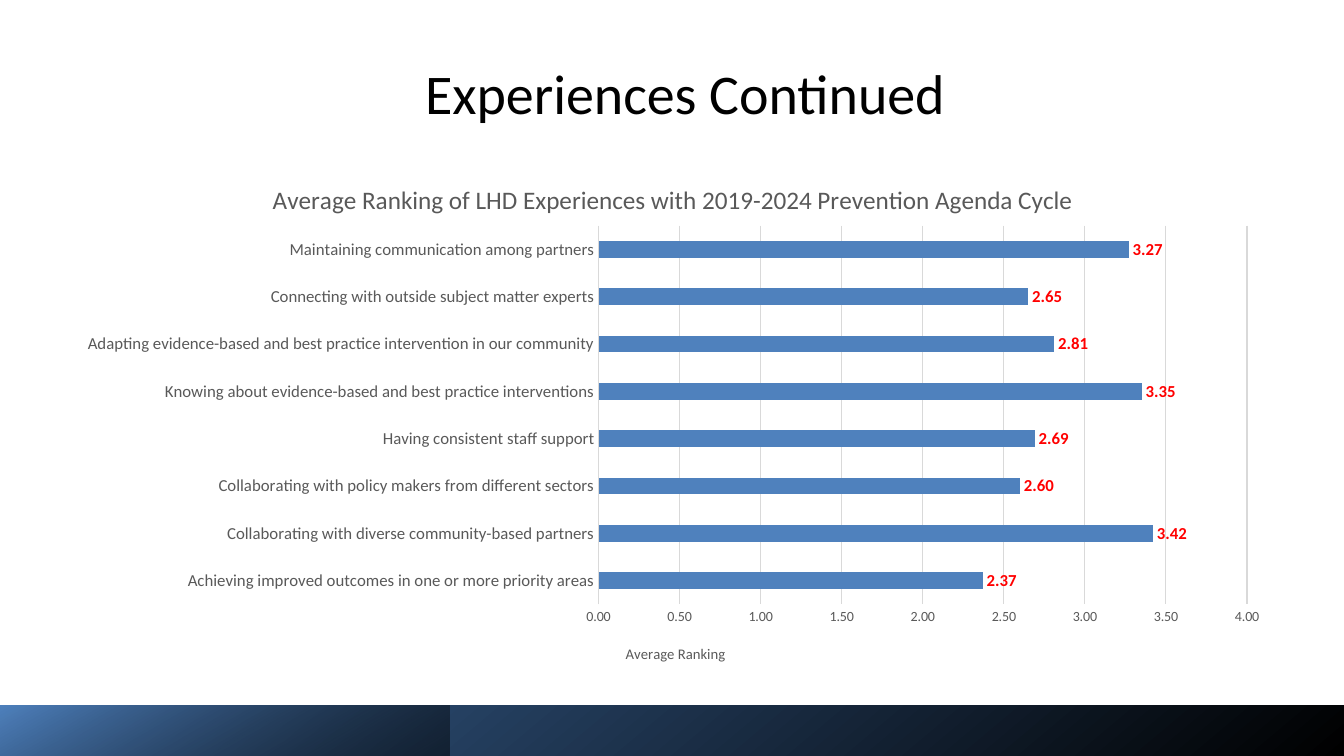
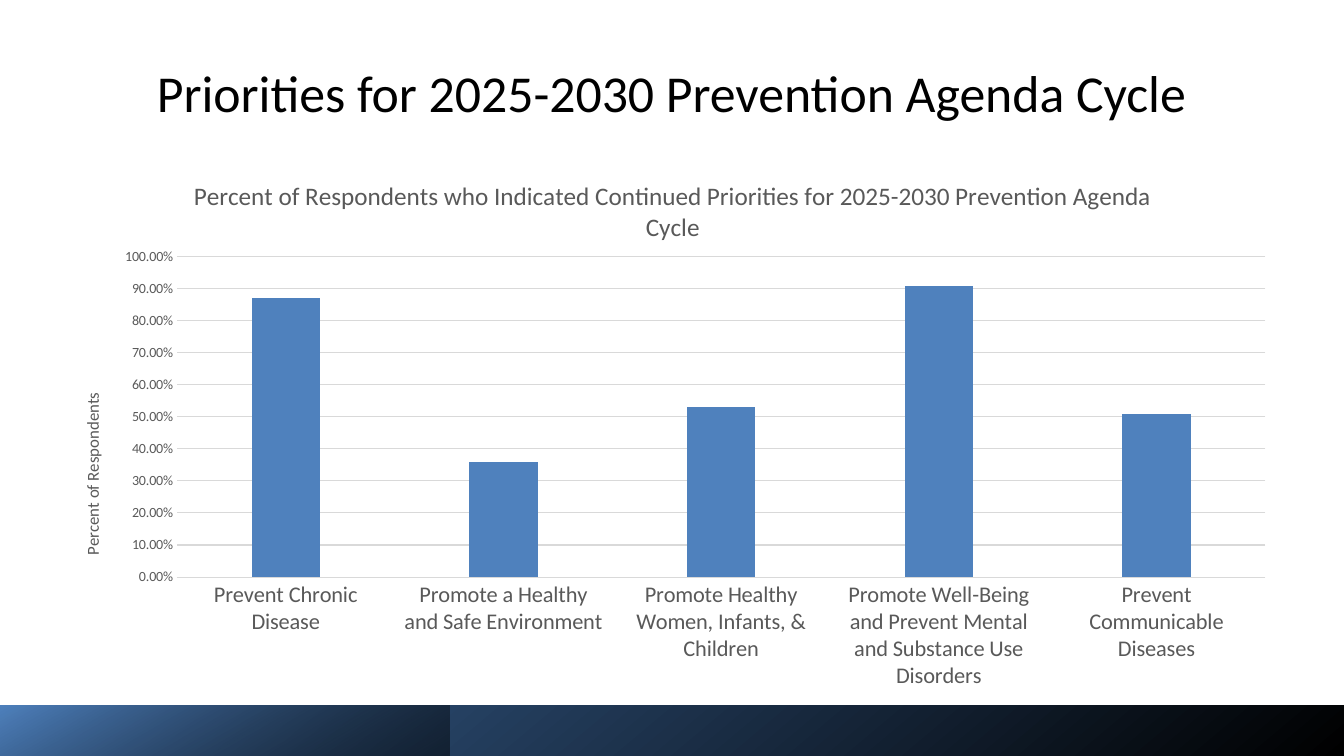
from lxml import etree
from pptx import Presentation
from pptx.chart.data import CategoryChartData
from pptx.dml.color import RGBColor
from pptx.enum import chart as charts, shapes, text
from pptx.oxml import ns
from pptx.util import Pt

FONT = "Calibri"
BLACK, GRAY, GRID, BLUE, NAVY, RED = (
    "000000", "595959", "D9D9D9", "4F81BD", "376092", "FF0000")

# width, gradient angle, start opacity in percent, end colour
BANDS = [(960, 130, 100, NAVY), (321, 120, 46, BLUE)]

SLIDES = [
    dict(
        title="Experiences Continued", title_size=40, title_left=88.5,
        kind=charts.XL_CHART_TYPE.BAR_CLUSTERED,
        box=(43, 108.5, 874, 376),
        heading="Average Ranking of LHD Experiences with 2019-2024 Prevention Agenda Cycle",
        heading_at=(0.17, 0.05),
        axis_title="Average Ranking", axis_title_size=10.5,
        axis_title_at=(0.46, 0.93), axis_title_turn=0,
        plot_at=(0.44, 0.14, 0.53, 0.72),
        category_size=12, number_format="0.00", top=4, step=0.5,
        gap=182, overlap=0, labels=True,
        data=[
            ("Achieving improved outcomes in one or more priority areas", 2.37),
            ("Collaborating with diverse community-based partners", 3.42),
            ("Collaborating with policy makers from different sectors", 2.6),
            ("Having consistent staff support", 2.69),
            ("Knowing about evidence-based and best practice interventions", 3.35),
            ("Adapting evidence-based and best practice intervention in our community", 2.81),
            ("Connecting with outside subject matter experts", 2.65),
            ("Maintaining communication among partners", 3.27),
        ]),
    dict(
        title="Priorities for 2025-2030 Prevention Agenda Cycle",
        title_size=37, title_left=79,
        kind=charts.XL_CHART_TYPE.COLUMN_CLUSTERED,
        box=(38, 108.5, 883.5, 394.5),
        heading="Percent of Respondents who Indicated Continued Priorities "
                "for 2025-2030 Prevention Agenda Cycle",
        heading_at=(0.11, 0.04),
        axis_title="Percent of Respondents", axis_title_size=12,
        axis_title_at=(0.02, 0.43), axis_title_turn=-90,
        plot_at=(0.1, 0.19, 0.88, 0.58),
        category_size=16, number_format="0.00%", top=1, step=0.1,
        gap=219, overlap=-27, labels=False,
        data=[
            ("Prevent Chronic Disease", 0.87),
            ("Promote a Healthy and Safe Environment", 0.36),
            ("Promote Healthy Women, Infants, & Children", 0.53),
            ("Promote Well-Being and Prevent Mental and Substance Use Disorders", 0.91),
            ("Prevent Communicable Diseases", 0.51),
        ]),
]


def style_font(font, size, color, bold=False):
    font.name = FONT
    font.size = Pt(size)
    font.bold = bold
    font.color.rgb = RGBColor.from_string(color)


def place_in_chart(parent, index, fractions, inner=False):
    """Fix a chart part at x, y (and w, h), given as fractions of the chart."""
    for old in parent.findall(ns.qn("c:layout")):
        parent.remove(old)
    layout = etree.Element(ns.qn("c:layout"))
    parent.insert(index, layout)
    manual = etree.SubElement(layout, ns.qn("c:manualLayout"))
    settings = [("layoutTarget", "inner")] if inner else []
    settings += [("xMode", "edge"), ("yMode", "edge")]
    settings += zip("xywh", fractions)
    for name, value in settings:
        etree.SubElement(manual, ns.qn("c:" + name)).set("val", str(value))


presentation = Presentation()
presentation.slide_width, presentation.slide_height = Pt(960), Pt(540)

for content in SLIDES:
    slide = presentation.slides.add_slide(presentation.slide_layouts[5])

    # Title
    title = slide.shapes.title
    title.left, title.top = Pt(content["title_left"]), Pt(22.5)
    title.width, title.height = Pt(801.5), Pt(86)
    title.text_frame.vertical_anchor = text.MSO_ANCHOR.MIDDLE
    paragraph = title.text_frame.paragraphs[0]
    paragraph.alignment = text.PP_ALIGN.CENTER
    run = paragraph.add_run()
    run.text = content["title"]
    style_font(run.font, content["title_size"], BLACK)

    # Footer bands
    for width, angle, opacity, end_color in BANDS:
        band = slide.shapes.add_shape(
            shapes.MSO_SHAPE.RECTANGLE, 0, Pt(504), Pt(width), Pt(36))
        band.shadow.inherit = False
        band.line.fill.background()
        band.fill.gradient()
        band.fill.gradient_angle = angle
        for stop, color, position in zip(
                band.fill.gradient_stops, (BLACK, end_color), (0, 1)):
            stop.color.rgb = RGBColor.from_string(color)
            stop.position = position
        if opacity < 100:
            start_color = band._element.spPr.find(".//" + ns.qn("a:srgbClr"))
            etree.SubElement(start_color, ns.qn("a:alpha")).set("val", str(opacity * 1000))

    # Chart
    chart_data = CategoryChartData(number_format=content["number_format"])
    chart_data.categories = [name for name, value in content["data"]]
    chart_data.add_series("Series 1", [value for name, value in content["data"]])
    chart = slide.shapes.add_chart(
        content["kind"], *[Pt(length) for length in content["box"]], chart_data).chart
    chart.has_legend = False
    style_font(chart.font, 10, GRAY)

    category_axis, value_axis = chart.category_axis, chart.value_axis
    for axis, size in ((category_axis, content["category_size"]), (value_axis, 10)):
        axis.major_tick_mark = axis.minor_tick_mark = charts.XL_TICK_MARK.NONE
        style_font(axis.tick_labels.font, size, GRAY)
    category_axis.has_major_gridlines = False
    value_axis.has_major_gridlines = True
    value_axis.minimum_scale = 0
    value_axis.maximum_scale = content["top"]
    value_axis.major_unit = content["step"]
    value_axis.tick_labels.number_format = content["number_format"]
    value_axis.tick_labels.number_format_is_linked = False
    value_axis.format.line.fill.background()
    for line in (category_axis.format.line, value_axis.major_gridlines.format.line):
        line.color.rgb = RGBColor.from_string(GRID)
        line.width = Pt(0.75)

    for caption, words, size, position, turn in (
            (chart.chart_title, content["heading"], 18, content["heading_at"], 0),
            (value_axis.axis_title, content["axis_title"], content["axis_title_size"],
             content["axis_title_at"], content["axis_title_turn"])):
        run = caption.text_frame.paragraphs[0].add_run()
        run.text = words
        style_font(run.font, size, GRAY)
        body = caption._element.find(".//" + ns.qn("a:bodyPr"))
        body.set("rot", str(turn * 60000))
        body.set("vert", "horz")
        place_in_chart(caption._element, 1, position)
    plot_area = chart._chartSpace.find(".//" + ns.qn("c:plotArea"))
    place_in_chart(plot_area, 0, content["plot_at"], inner=True)

    plot = chart.plots[0]
    plot.vary_by_categories = False
    plot.gap_width = content["gap"]
    plot.overlap = content["overlap"]
    bars = plot.series[0]
    bars.format.fill.solid()
    bars.format.fill.fore_color.rgb = RGBColor.from_string(BLUE)
    if content["labels"]:
        labels = bars.data_labels
        labels.show_value = True
        labels.position = charts.XL_LABEL_POSITION.OUTSIDE_END
        labels.number_format = content["number_format"]
        labels.number_format_is_linked = False
        style_font(labels.font, 12, RED, bold=True)

presentation.save("out.pptx")
